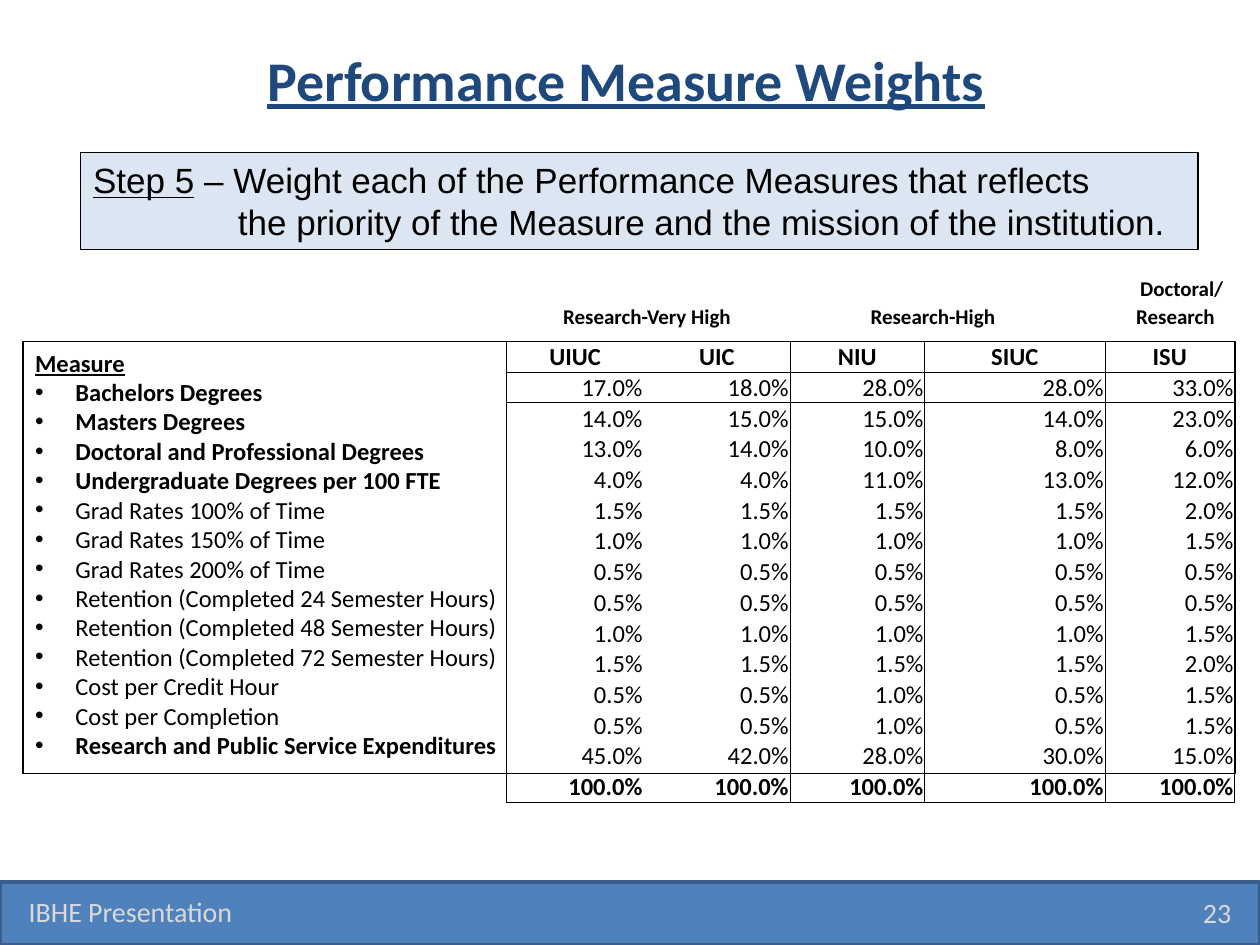
from collections import namedtuple
from lxml.etree import SubElement
from pptx import Presentation
from pptx.dml.color import RGBColor
from pptx.enum.shapes import MSO_SHAPE as Shape
from pptx.enum.text import MSO_ANCHOR as Anchor, PP_ALIGN as Align
from pptx.oxml.ns import qn
from pptx.util import Inches, Pt

BLACK = RGBColor(0, 0, 0)
NAVY = RGBColor(0x1F, 0x49, 0x7D)
BLUE = RGBColor(0x4F, 0x81, 0xBD)
BLUE_EDGE = RGBColor(0x3A, 0x5F, 0x8C)
PALE_BLUE = RGBColor(0xDC, 0xE6, 0xF2)
PALE_GREY = RGBColor(0xD9, 0xD9, 0xD9)
PLAIN_TABLE = "{2D5ABB26-0587-4C30-8999-92F81FD0307C}"

COLUMNS, ROWS = 100, 75
WIDTH, HEIGHT = Inches(10), Inches(7.5)
Box = namedtuple("Box", "left top width height")

MEASURES = [
    ("Bachelors Degrees", True, "17.0 18.0 28.0 28.0 33.0"),
    ("Masters Degrees", True, "14.0 15.0 15.0 14.0 23.0"),
    ("Doctoral and Professional Degrees", True, "13.0 14.0 10.0 8.0 6.0"),
    ("Undergraduate Degrees per 100 FTE", True, "4.0 4.0 11.0 13.0 12.0"),
    ("Grad Rates 100% of Time", False, "1.5 1.5 1.5 1.5 2.0"),
    ("Grad Rates 150% of Time", False, "1.0 1.0 1.0 1.0 1.5"),
    ("Grad Rates 200% of Time", False, "0.5 0.5 0.5 0.5 0.5"),
    ("Retention (Completed 24 Semester Hours)", False, "0.5 0.5 0.5 0.5 0.5"),
    ("Retention (Completed 48 Semester Hours)", False, "1.0 1.0 1.0 1.0 1.5"),
    ("Retention (Completed 72 Semester Hours)", False, "1.5 1.5 1.5 1.5 2.0"),
    ("Cost per Credit Hour", False, "0.5 0.5 1.0 0.5 1.5"),
    ("Cost per Completion", False, "0.5 0.5 1.0 0.5 1.5"),
    ("Research and Public Service Expenditures", True, "45.0 42.0 28.0 30.0 15.0"),
]
SCHOOLS = ["UIUC", "UIC", "NIU", "SIUC", "ISU"]


def across(columns):
    return int(WIDTH * columns / COLUMNS)


def down(rows):
    return int(HEIGHT * rows / ROWS)


def place(box):
    return across(box.left), down(box.top), across(box.width), down(box.height)


def write(para, text, size=14, font="Calibri", color=BLACK, bold=False,
          underline=False, align=None):
    span = para.add_run()
    span.text = text
    span.font.size = Pt(size)
    span.font.name = font
    span.font.color.rgb = color
    span.font.bold = bold
    span.font.underline = underline
    if align is not None:
        para.alignment = align


def indent(para, left, first=0):
    props = para._p.get_or_add_pPr()
    props.set("marL", str(left))
    props.set("indent", str(first))
    return props


def add_panel(page, box, fill, line, weight):
    panel = page.shapes.add_shape(Shape.RECTANGLE, *place(box))
    panel.shadow.inherit = False
    if fill is None:
        panel.fill.background()
    else:
        panel.fill.solid()
        panel.fill.fore_color.rgb = fill
    panel.line.color.rgb = line
    panel.line.width = Pt(weight)
    frame = panel.text_frame
    frame.word_wrap = True
    frame.vertical_anchor = Anchor.TOP
    frame.paragraphs[0].alignment = Align.LEFT
    return frame


def add_title(page, box):
    title = page.shapes.title
    title.left, title.top, title.width, title.height = place(box)
    title.text_frame.vertical_anchor = Anchor.MIDDLE
    write(title.text_frame.paragraphs[0], "Performance Measure Weights", size=32,
          color=NAVY, bold=True, underline=True, align=Align.CENTER)


def add_footer(page, box):
    add_panel(page, box, BLUE, BLUE_EDGE, 2)
    label_box = Box(box.left + 1.3, box.top + 0.3, 31.7, 4)
    number_box = Box(box.left + box.width - 6.2, box.top + 0.4, 4.9, 4)
    for text, part, align in [("IBHE Presentation", label_box, Align.LEFT),
                              ("23", number_box, Align.RIGHT)]:
        frame = page.shapes.add_textbox(*place(part)).text_frame
        frame.word_wrap = True
        frame.vertical_anchor = Anchor.MIDDLE
        write(frame.paragraphs[0], text, size=16, color=PALE_GREY, align=align)


def add_step(page, box):
    frame = add_panel(page, box, PALE_BLUE, BLACK, 1)
    style = dict(size=20, font="Arial")
    para = frame.paragraphs[0]
    write(para, "Step 5", underline=True, **style)
    write(para, " – Weight each of the Performance Measures that reflects", **style)
    para = frame.add_paragraph()
    indent(para, across(11.5))
    write(para, "the priority of the Measure and the mission of the institution.",
          align=Align.LEFT, **style)


def add_measures(page, box):
    frame = add_panel(page, box, None, BLACK, 1)
    write(frame.paragraphs[0], "Measure", bold=True, underline=True)
    for name, bold, _ in MEASURES:
        para = frame.add_paragraph()
        props = indent(para, across(3.2), -across(3.2))
        SubElement(props, qn("a:buFont")).set("typeface", "Arial")
        SubElement(props, qn("a:buChar")).set("char", "•")
        write(para, name, bold=bold, align=Align.LEFT)


def add_grid(page, box, widths, row_count):
    table = page.shapes.add_table(row_count, len(widths), *place(box)).table
    table.first_row = table.horz_banding = False
    table._tbl.tblPr.find(qn("a:tableStyleId")).text = PLAIN_TABLE
    for column, width in zip(table.columns, widths):
        column.width = across(width)
    for row in table.rows:
        row.height = down(box.height / row_count)
    return table


def format_cell(cell, text, left=0.1, sides="", size=14, **style):
    cell.margin_left, cell.margin_right = across(left), across(0.1)
    cell.margin_top, cell.margin_bottom = Pt(0.5), 0
    cell.vertical_anchor = Anchor.BOTTOM
    for side in sides:
        line = SubElement(cell._tc.get_or_add_tcPr(), qn(f"a:ln{side}"))
        line.set("w", str(Pt(0.5)))
        fill = SubElement(line, qn("a:solidFill"))
        SubElement(fill, qn("a:srgbClr")).set("val", str(BLACK))
    cell.fill.background()
    para = cell.text_frame.paragraphs[0]
    if text:
        write(para, text, size=size, **style)
    else:
        SubElement(para._p, qn("a:endParaRPr")).set("sz", str(size * 100))


def add_groups(page, box):
    table = add_grid(page, box, [11.4, 11.9, 11, 13.7, 9.6], 2)
    headings = {
        (0, 4): ("Doctoral/", 1.1, Align.CENTER),
        (1, 0): ("Research-Very High", 4.2, Align.LEFT),
        (1, 2): ("Research-High", 5.3, Align.LEFT),
        (1, 4): ("Research", 0.1, Align.CENTER),
    }
    for row in range(2):
        for col in range(5):
            text, left, align = headings.get((row, col), ("", 0.1, None))
            format_cell(table.cell(row, col), text, left=left, size=12,
                        bold=True, align=align)
    for col in (0, 2):
        table.cell(1, col).merge(table.cell(1, col + 1))


def add_weights(page, box):
    shares = [values.split() for _, _, values in MEASURES] + [["100.0"] * 5]
    lines = [SCHOOLS] + [[f"{value}%" for value in values] for values in shares]
    table = add_grid(page, box, [10.9, 11.6, 10.7, 14.3, 10.3], len(lines))
    last = len(lines) - 1
    for row, texts in enumerate(lines):
        for col, text in enumerate(texts):
            sides = "L" if col != 1 else ""
            sides += "R" if col != 0 else ""
            sides += "T" if row in (0, 1) else ""
            sides += "B" if row in (0, last) else ""
            format_cell(table.cell(row, col), text, sides=sides,
                        bold=row in (0, last),
                        align=Align.RIGHT if row else Align.CENTER)


def main():
    deck = Presentation()
    deck.slide_width, deck.slide_height = WIDTH, HEIGHT
    page = deck.slides.add_slide(deck.slide_layouts[5])
    add_footer(page, Box(0, 70, COLUMNS, 5))
    add_title(page, Box(4.7, 0, 90, 12.5))
    add_step(page, Box(6.4, 12.1, 88.7, 7.7))
    add_groups(page, Box(40.5, 21.8, 57.6, 4.4))
    add_measures(page, Box(1.8, 27.1, 96.2, 34.3))
    add_weights(page, Box(40.2, 27.1, 57.8, 36.6))
    deck.save("out.pptx")


if __name__ == "__main__":
    main()
